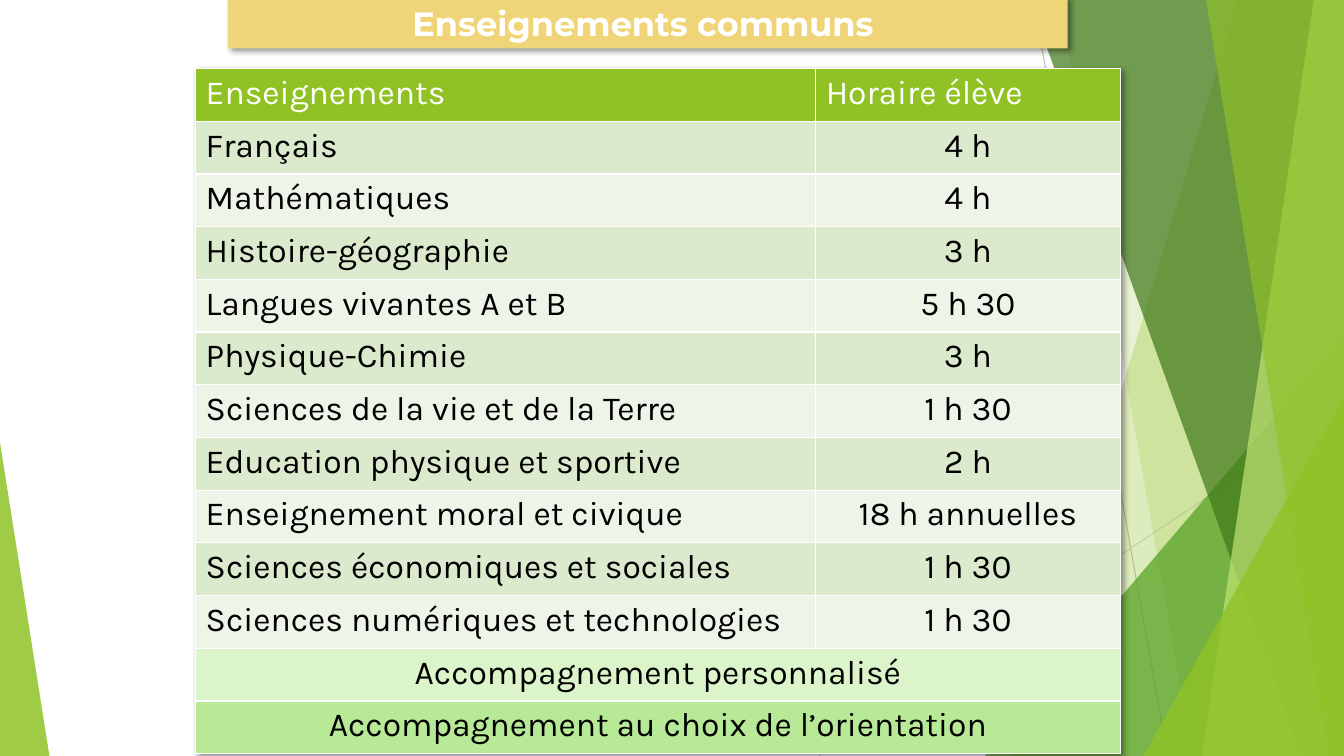
from lxml.etree import SubElement
from pptx import Presentation
from pptx.dml.color import RGBColor
from pptx.enum.shapes import MSO_CONNECTOR as CONN, MSO_SHAPE as SHAPE
from pptx.enum.text import MSO_ANCHOR as ANCHOR, PP_ALIGN as ALIGN
from pptx.oxml import parse_xml
from pptx.oxml.ns import nsdecls, qn
from pptx.util import Pt

# Content
TITLE = "Enseignements communs "
HEADER = ("Enseignements", "Horaire élève")
COURSES = [
    ("Français", "4 h"),
    ("Mathématiques", "4 h"),
    ("Histoire-géographie", "3 h"),
    ("Langues vivantes A et B", "5 h 30"),
    ("Physique-Chimie", "3 h"),
    ("Sciences de la vie et de la Terre", "1 h 30"),
    ("Education physique et sportive", "2 h"),
    ("Enseignement moral et civique", "18 h annuelles"),
    ("Sciences économiques et sociales", "1 h 30"),
    ("Sciences numériques et technologies", "1 h 30"),
]
SUPPORT = ["Accompagnement personnalisé", "Accompagnement au choix de l’orientation"]

THEME = {
    "white": "FFFFFF", "black": "000000", "banner": "F0D578",
    "green": "90C226", "mid": "54A021", "dark": "3F7819", "pale": "C0E474",
    "bands": ("DBE9CD", "EEF4E8"), "support": ("DBF4CA", "B7E996"),
    "title_font": "Montserrat", "table_font": "Karla", "size": Pt(24),
}

# Layout in px, 100 to the inch
PX = 9144
W, H, TOP = 1333, 750, -1
BANNER = (226, -3, 833, 51)
TABLE_AT = (194, 68)
TABLE_H = 680
COLS = (615, 302)

# Background: hairlines, then panels from back to front
HAIRLINES = [((1025, 0), (1158, H), "BFBFBF"), ((W, 403), (812, H), "D9D9D9")]
PANELS = [  # ("band", top x, bottom x) or ("triangle", box, apex); colour, opacity %
    ("band", 1228, 1004, "green", 30),
    ("band", 1050, 1183, "green", 20),
    ("triangle", (977, 333, 356, 417), 1, "mid", 72),
    ("band", 1021, 1291, "dark", 70),
    ("band", 1303, 1192, "pale", 70),
    ("band", 1196, 1318, "green", 65),
    ("triangle", (1134, 393, 199, 357), 1, "green", 80),
    ("triangle", (0, 439, 49, 311), 0, "green", 85),
]


def emu(*lengths):
    return [n * PX for n in lengths]


def paint(sp, color, opacity=100):
    sp.shadow.inherit = False
    sp.fill.solid()
    sp.fill.fore_color.rgb = RGBColor.from_string(color)
    sp.line.fill.background()
    if opacity < 100:
        clr = sp._element.spPr.find(qn("a:solidFill"))[0]
        SubElement(clr, qn("a:alpha"), val=str(opacity * 1000))


def drop_shadow():
    return parse_xml(
        f'<a:effectLst {nsdecls("a")}><a:outerShdw blurRad="50800" dist="38100" '
        'dir="2700000" algn="tl" rotWithShape="0"><a:srgbClr val="000000">'
        '<a:alpha val="40000"/></a:srgbClr></a:outerShdw></a:effectLst>')


def write(tf, text, font, color, align, bold=False):
    p = tf.paragraphs[0]
    p.text, p.alignment = text, align
    p.font.name, p.font.size, p.font.bold = font, THEME["size"], bold
    p.font.color.rgb = RGBColor.from_string(color)


def add_background(shapes):
    for start, end, color in HAIRLINES:
        line = shapes.add_connector(CONN.STRAIGHT, *emu(*start, *end))
        line.line.color.rgb = RGBColor.from_string(color)
        line.line.width = Pt(0.75)
        SubElement(line._element.spPr, qn("a:effectLst"))
    for kind, a, b, color, opacity in PANELS:
        if kind == "band":
            outline = shapes.build_freeform(a, TOP, scale=PX)
            outline.add_line_segments([(W, TOP), (W, H), (b, H)], close=True)
            sp = outline.convert_to_shape()
        else:
            sp = shapes.add_shape(SHAPE.ISOSCELES_TRIANGLE, *emu(*a))
            sp.adjustments[0] = b
        paint(sp, THEME[color], opacity)


def add_banner(shapes):
    sp = shapes.add_shape(SHAPE.RECTANGLE, *emu(*BANNER))
    paint(sp, THEME["banner"])
    sp._element.spPr.remove(sp._element.spPr.find(qn("a:effectLst")))
    sp._element.spPr.append(drop_shadow())
    tf = sp.text_frame
    tf.word_wrap, tf.vertical_anchor = True, ANCHOR.MIDDLE
    write(tf, TITLE, THEME["title_font"], THEME["white"], ALIGN.CENTER, True)


def fill_cell(cell, text, fill, color, align):
    cell.fill.solid()
    cell.fill.fore_color.rgb = RGBColor.from_string(fill)
    write(cell.text_frame, text, THEME["table_font"], color, align)


def add_borders(cell):
    tc_pr = cell._tc.get_or_add_tcPr()
    for i, side in enumerate("LRTB"):
        tc_pr.insert(i, parse_xml(
            f'<a:ln{side} {nsdecls("a")} w="12700"><a:solidFill>'
            f'<a:srgbClr val="{THEME["white"]}"/></a:solidFill></a:ln{side}>'))


def add_timetable(shapes):
    n_rows = 1 + len(COURSES) + len(SUPPORT)
    frame = shapes.add_table(n_rows, len(COLS), *emu(*TABLE_AT, sum(COLS), TABLE_H))
    table = frame.table
    table._tbl.tblPr.insert(0, drop_shadow())
    for col, width in zip(table.columns, COLS):
        col.width = width * PX
    for row in table.rows:
        row.height = TABLE_H * PX // n_rows

    for c, text in enumerate(HEADER):
        fill_cell(table.cell(0, c), text, THEME["green"], THEME["white"], ALIGN.LEFT)
    for r, course in enumerate(COURSES):
        for c, text in enumerate(course):
            fill_cell(table.cell(r + 1, c), text, THEME["bands"][r % 2],
                      THEME["black"], (ALIGN.LEFT, ALIGN.CENTER)[c])
    for r, text in enumerate(SUPPORT, 1 + len(COURSES)):
        cell = table.cell(r, 0)
        cell.merge(table.cell(r, 1))
        fill_cell(cell, text, THEME["support"][r - 1 - len(COURSES)],
                  THEME["black"], ALIGN.CENTER)
    for cell in table.iter_cells():
        add_borders(cell)


def main():
    prs = Presentation()
    prs.slide_width, prs.slide_height = emu(W, H)
    shapes = prs.slides.add_slide(prs.slide_layouts[6]).shapes
    add_background(shapes)
    add_banner(shapes)
    add_timetable(shapes)
    prs.save("out.pptx")


if __name__ == "__main__":
    main()
